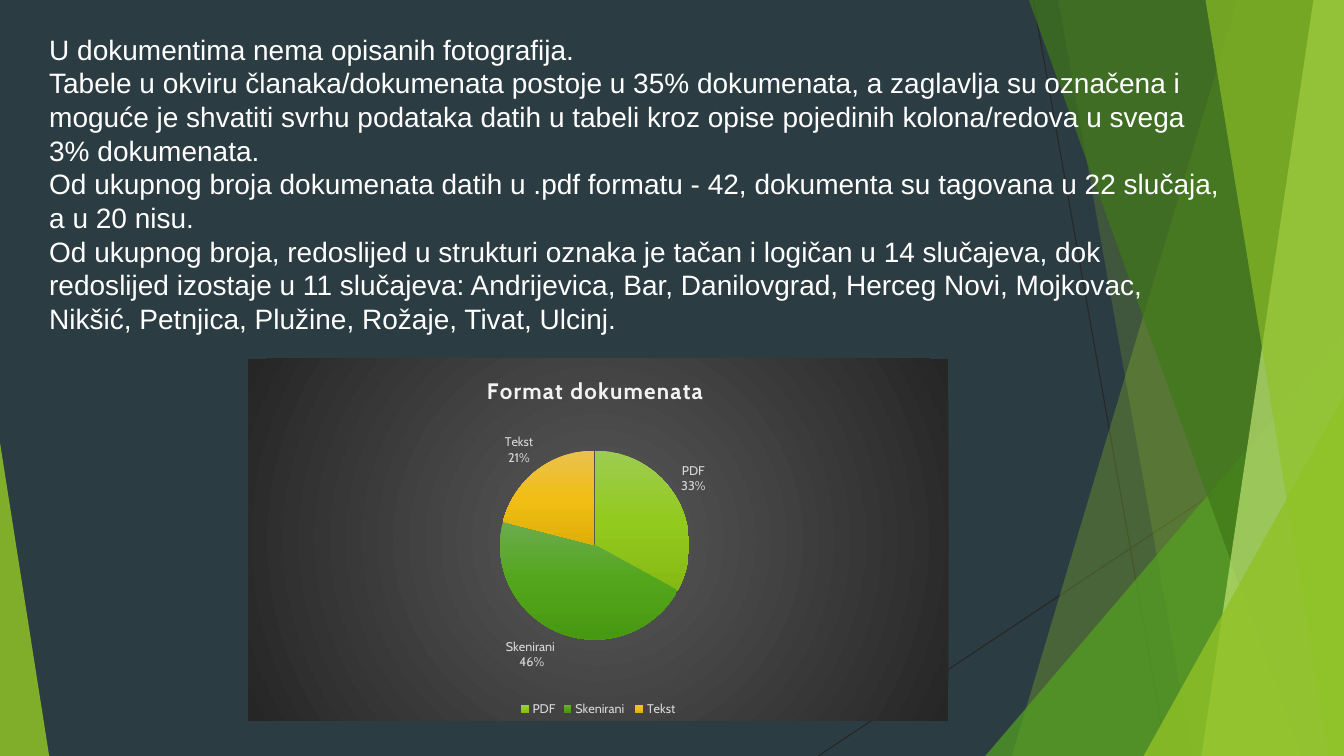
from collections import namedtuple

from lxml import etree
from pptx import Presentation
from pptx.chart.data import CategoryChartData
from pptx.dml.color import RGBColor
from pptx.enum.chart import XL_CHART_TYPE, XL_LABEL_POSITION, XL_LEGEND_POSITION
from pptx.enum.shapes import MSO_CONNECTOR, MSO_SHAPE
from pptx.enum.text import MSO_ANCHOR, MSO_AUTO_SIZE
from pptx.oxml import parse_xml
from pptx.oxml.ns import nsdecls, qn
from pptx.util import Cm, Pt

PIE = XL_CHART_TYPE.PIE
OUTSIDE_END = XL_LABEL_POSITION.OUTSIDE_END
BOTTOM = XL_LEGEND_POSITION.BOTTOM
STRAIGHT = MSO_CONNECTOR.STRAIGHT
TRIANGLE = MSO_SHAPE.ISOSCELES_TRIANGLE
TOP = MSO_ANCHOR.TOP
GROW = MSO_AUTO_SIZE.SHAPE_TO_FIT_TEXT

Box = namedtuple("Box", "left top width height")
SLIDE_BOX = Box(0, 0, 33.87, 19.05)
TEXT_BOX = Box(0.99, 0.69, 30.07, 10.26)
CHART_BOX = Box(6.25, 9.04, 17.65, 9.12)

COLORS = {
    "background": "2C3C43",
    "line": "262626",
    "lime": "90C226",
    "green": "54A021",
    "forest": "3F7819",
    "pale": "C0E474",
    "white": "FFFFFF",
    "title": "F2F2F2",
    "label": "D9D9D9",
    "chart_center": "595959",
    "chart_edge": "262626",
}

SLICES = [
    ("PDF", 33, ("9DCC51", "93CA1E", "85BA14")),
    ("Skenirani ", 46, ("6BAC4F", "53A61B", "489912")),
    ("Tekst", 21, ("EBC14F", "F0BE14", "E0AF07")),
]
CHART_TITLE = "Format dokumenata "

PARAGRAPHS = [
    "U dokumentima nema opisanih fotografija.",
    "Tabele u okviru članaka/dokumenata postoje u 35% dokumenata, a zaglavlja su označena i "
    "moguće je shvatiti svrhu podataka datih u tabeli kroz opise pojedinih kolona/redova u "
    "svega 3% dokumenata.",
    "Od ukupnog broja dokumenata datih u .pdf formatu - 42, dokumenta su tagovana u 22 "
    "slučaja, a u 20 nisu.",
    "Od ukupnog broja, redoslijed u strukturi oznaka je tačan i logičan u 14 slučajeva, dok "
    "redoslijed izostaje u 11 slučajeva: Andrijevica, Bar, Danilovgrad, Herceg Novi, Mojkovac, "
    "Nikšić, Petnjica, Plužine, Rožaje, Tivat, Ulcinj.",
]


def color(name):
    return RGBColor.from_string(COLORS[name])


def lengths(box):
    return [Cm(value) for value in box]


def style_font(font, name, size, color_name, bold=False):
    font.name = name
    font.size = Pt(size)
    font.bold = bold
    font.color.rgb = color(color_name)


def fill_glass(shape, color_name, opacity):
    shape.shadow.inherit = False
    shape.line.fill.background()
    shape.fill.solid()
    shape.fill.fore_color.rgb = color(color_name)
    rgb = shape.fill._xPr.find(".//" + qn("a:srgbClr"))
    etree.SubElement(rgb, qn("a:alpha"), val=str(opacity * 1000))


def add_hairline(slide, start, end):
    line = slide.shapes.add_connector(STRAIGHT, *lengths(start + end))
    line.line.color.rgb = color("line")
    line.line.width = Pt(0.75)
    etree.SubElement(line._element.spPr, qn("a:effectLst"))


def add_shard(slide, box, top_x, bottom_x, color_name, opacity):
    right, bottom = box.left + box.width, box.top + box.height
    points = [(top_x, box.top), (right, box.top), (right, bottom), (bottom_x, bottom)]
    start, *others = [tuple(lengths(point)) for point in points]
    builder = slide.shapes.build_freeform(*start)
    builder.add_line_segments(others, close=True)
    fill_glass(builder.convert_to_shape(), color_name, opacity)


def add_corner(slide, box, width, height, color_name, opacity, at_right=True):
    left = box.left + box.width - width if at_right else box.left
    corner = Box(left, box.top + box.height - height, width, height)
    shape = slide.shapes.add_shape(TRIANGLE, *lengths(corner))
    shape.adjustments[0] = 1 if at_right else 0
    fill_glass(shape, color_name, opacity)


def add_backdrop(slide, box):
    right, bottom = box.left + box.width, box.top + box.height
    add_hairline(slide, (box.left + 26.04, box.top), (box.left + 29.41, bottom))
    add_hairline(slide, (right, box.top + 10.24), (box.left + 20.62, bottom))
    add_shard(slide, box, box.left + 31.19, box.left + 25.5, "lime", 30)
    add_shard(slide, box, box.left + 26.67, box.left + 30.05, "lime", 20)
    add_corner(slide, box, 9.04, 10.59, "green", 72)
    add_shard(slide, box, box.left + 25.93, box.left + 32.79, "forest", 70)
    add_shard(slide, box, box.left + 33.1, box.left + 30.28, "pale", 70)
    add_shard(slide, box, box.left + 30.38, box.left + 33.48, "lime", 65)
    add_corner(slide, box, 5.05, 9.07, "lime", 80)
    add_corner(slide, box, 1.24, 7.9, "lime", 85, at_right=False)


def add_findings(slide, box):
    frame = slide.shapes.add_textbox(*lengths(box)).text_frame
    frame.word_wrap = True
    frame.vertical_anchor = TOP
    frame.auto_size = GROW
    frame.text = "\n".join(PARAGRAPHS)
    for paragraph in frame.paragraphs:
        paragraph.line_spacing = Pt(24)
        style_font(paragraph.font, "Arial", 20, "white")


def gradient(stops, direction):
    last = len(stops) - 1
    marks = "".join(
        f'<a:gs pos="{100000 * index // last}"><a:srgbClr val="{stop}"/></a:gs>'
        for index, stop in enumerate(stops)
    )
    return f"<a:gradFill><a:gsLst>{marks}</a:gsLst>{direction}</a:gradFill>"


def chart_format(fill):
    return parse_xml(
        f'<c:spPr {nsdecls("c", "a")}>{fill}<a:ln><a:noFill/></a:ln></c:spPr>'
    )


def place_plot(chart, x, y, width, height):
    plot_area = chart._chartSpace.chart.plotArea
    for layout in plot_area.findall(qn("c:layout")):
        plot_area.remove(layout)
    sizes = "".join(
        f'<c:{tag} val="{value}"/>'
        for tag, value in zip("xywh", (x, y, width, height))
    )
    plot_area.insert(0, parse_xml(
        f'<c:layout {nsdecls("c")}><c:manualLayout><c:layoutTarget val="inner"/>'
        f'<c:xMode val="edge"/><c:yMode val="edge"/>{sizes}</c:manualLayout></c:layout>'
    ))


def add_format_chart(slide, box):
    data = CategoryChartData()
    data.categories = [name for name, _, _ in SLICES]
    data.add_series(CHART_TITLE, [value for _, value, _ in SLICES])
    chart = slide.shapes.add_chart(PIE, *lengths(box), data).chart
    style_font(chart.font, "Cabin", 10, "white")

    title = chart.chart_title.text_frame
    title.text = CHART_TITLE
    style_font(title.paragraphs[0].font, "Cabin", 16, "title", bold=True)
    title.paragraphs[0].runs[0].font._element.set("spc", "100")
    chart.chart_title.include_text_in_layout = False

    chart.has_legend = True
    chart.legend.position = BOTTOM
    chart.legend.include_in_layout = False
    style_font(chart.legend.font, "Cabin", 9, "label")

    plot = chart.plots[0]
    plot.vary_by_categories = True
    plot.has_data_labels = True
    labels = plot.data_labels
    labels.show_value = False
    labels.show_percentage = True
    labels.show_category_name = True
    labels.number_format = "0%"
    labels.number_format_is_linked = False
    labels.position = OUTSIDE_END
    style_font(labels.font, "Cabin", 9, "label")
    separator = etree.Element(qn("c:separator"))
    separator.text = "\n"
    labels._element.find(qn("c:showBubbleSize")).addnext(separator)

    series = plot.series[0]
    for index, (_, _, stops) in enumerate(SLICES):
        series.points[index].format.fill.background()
        point_format = series._element.findall(qn("c:dPt"))[index].find(qn("c:spPr"))
        fill = gradient(stops, '<a:lin ang="5400000" scaled="0"/>')
        point_format.getparent().replace(point_format, chart_format(fill))

    center = '<a:path path="circle"><a:fillToRect l="50000" t="50000" r="50000" b="50000"/></a:path>'
    fill = gradient((COLORS["chart_center"], COLORS["chart_edge"]), center)
    chart._chartSpace.chart.addnext(chart_format(fill))
    place_plot(chart, 0.36, 0.25, 0.27, 0.53)


def main():
    presentation = Presentation()
    presentation.slide_width = Cm(SLIDE_BOX.width)
    presentation.slide_height = Cm(SLIDE_BOX.height)
    slide = presentation.slides.add_slide(presentation.slide_layouts[6])
    slide.background.fill.solid()
    slide.background.fill.fore_color.rgb = color("background")
    add_backdrop(slide, SLIDE_BOX)
    add_findings(slide, TEXT_BOX)
    add_format_chart(slide, CHART_BOX)
    presentation.save("out.pptx")


if __name__ == "__main__":
    main()
